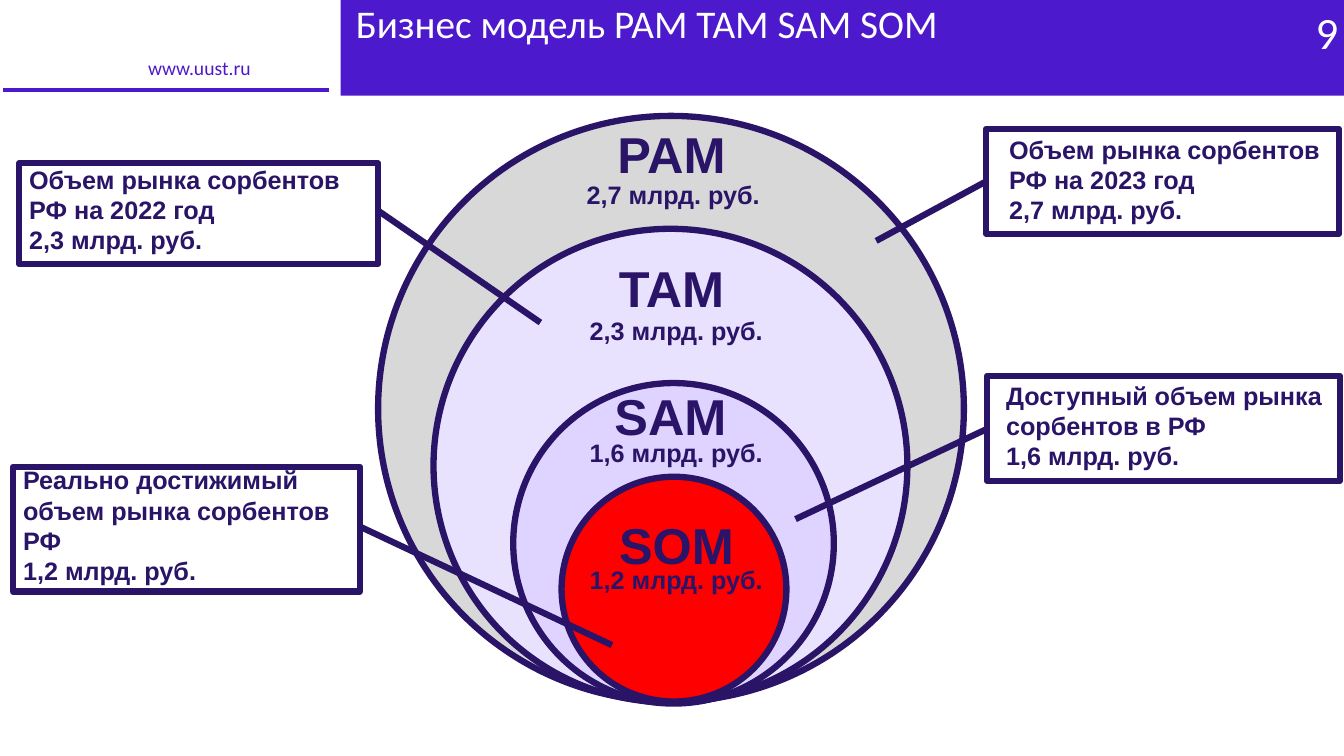
from pptx import Presentation
from pptx.dml.color import RGBColor
from pptx.enum.shapes import MSO_CONNECTOR as Line, MSO_SHAPE as Form
from pptx.enum.text import MSO_ANCHOR as Anchor, MSO_AUTO_SIZE as Fit, PP_ALIGN as Align
from pptx.oxml.ns import qn
from pptx.util import Inches, Pt
from lxml import etree

VIOLET = RGBColor(0x4D, 0x19, 0xCC)
DARK = RGBColor(0x2A, 0x14, 0x68)
WHITE = RGBColor(0xFF, 0xFF, 0xFF)
GREY = RGBColor(0xD8, 0xD8, 0xD8)
PALE = RGBColor(0xE9, 0xE2, 0xFF)
LILAC = RGBColor(0xDF, 0xD3, 0xFF)
RED = RGBColor(0xFF, 0x00, 0x00)


def add_form(kind, place, fill, edge):
    form = slide.shapes.add_shape(kind, *map(Inches, place))
    form.shadow.inherit = False
    if fill is None:
        form.fill.background()
    else:
        form.fill.solid()
        form.fill.fore_color.rgb = fill
    if edge is None:
        form.line.fill.background()
    else:
        form.line.color.rgb = edge
        form.line.width = Pt(4.5)


def add_text(box, lines, size, color=DARK, font="Arial", bold=True, align=Align.LEFT):
    frame = box.text_frame
    frame.word_wrap = True
    frame.auto_size = Fit.NONE
    frame.vertical_anchor = Anchor.TOP
    for index, line in enumerate(lines):
        para = frame.add_paragraph() if index else frame.paragraphs[0]
        para.alignment = align
        run = para.add_run()
        run.text = line
        run.font.name = font
        run.font.size = Pt(size)
        run.font.bold = bold
        run.font.color.rgb = color
    return frame


deck = Presentation()
deck.slide_width, deck.slide_height = Inches(13.33), Inches(7.5)
slide = deck.slides.add_slide(deck.slide_layouts[5])
shapes = slide.shapes

add_form(Form.RECTANGLE, (3.38, 0, 9.96, 0.95), VIOLET, None)
add_form(Form.RECTANGLE, (0, 0.84, 3.3, 0.1), VIOLET, WHITE)

title = shapes.title
title.left, title.top, title.width, title.height = map(Inches, (3.43, 0, 9.91, 0.46))
shapes._spTree.append(title._element)
head = add_text(title, ["Бизнес модель PAM TAM SAM SOM"], 28, WHITE, "Calibri", False)
head.paragraphs[0].line_spacing = 0.9

site = shapes.add_textbox(*map(Inches, (1.37, 0.53, 1.56, 0.27)))
link = add_text(site, ["www.uust.ru"], 14, VIOLET, "Calibri", False)
link.paragraphs[0].line_spacing = 0.9

page = shapes.add_textbox(*map(Inches, (12.95, 0, 0.38, 0.64)))
add_text(page, ["9"], 32, WHITE, "Calibri", False, Align.RIGHT)

markets = [
    ("PAM", "2,7 млрд. руб.", (3.75, 1.15, 5.81), GREY, (5.92, 1.17), (5.72, 1.73)),
    ("TAM", "2,3 млрд. руб.", (4.3, 2.27, 4.7), PALE, (5.92, 2.5), (5.75, 3.08)),
    ("SAM", "1,6 млрд. руб.", (5.09, 3.8, 3.18), LILAC, (5.91, 3.77), (5.75, 4.29)),
    ("SOM", "1,2 млрд. руб.", (5.57, 4.73, 2.23), RED, (5.97, 5.05), (5.75, 5.55)),
]
for name, value, (left, top, size), fill, spot, below in markets:
    add_form(Form.OVAL, (left, top, size, size), fill, DARK)
for name, value, ring, fill, spot, below in markets:
    label = shapes.add_textbox(*map(Inches, (*spot, 1.48, 0.71)))
    add_text(label, [name], 36, align=Align.CENTER)
    amount = shapes.add_textbox(*map(Inches, (*below, 1.93, 0.4)))
    add_text(amount, [value], 18)

notes = [
    ("Объем рынка сорбентов РФ на 2023 год", "2,7 млрд. руб.",
     (9.78, 1.28, 3.5, 1.04), (9.91, 1.28, 3.36, 1.01), (9.78, 1.8, 8.69, 2.39)),
    ("Объем рынка сорбентов РФ на 2022 год", "2,3 млрд. руб.",
     (0.19, 1.62, 3.56, 1), (0.19, 1.58, 3.5, 1.01), (3.75, 2.09, 5.36, 3.2)),
    ("Доступный объем рынка сорбентов в РФ", "1,6 млрд. руб.",
     (9.79, 3.73, 3.5, 1.04), (9.88, 3.72, 3.45, 1.01), (9.8, 4.25, 7.89, 5.15)),
    ("Реально достижимый объем рынка сорбентов РФ", "1,2 млрд. руб.",
     (0.13, 4.63, 3.44, 1.24), (0.13, 4.56, 3.25, 1.31), (3.56, 5.22, 6.07, 6.4)),
]
for about, value, border, place, ends in notes:
    add_form(Form.RECTANGLE, border, None, DARK)
    add_text(shapes.add_textbox(*map(Inches, place)), [about, value], 18)
    lead = shapes.add_connector(Line.STRAIGHT, *map(Inches, ends))
    lead.line.color.rgb = DARK
    lead.line.width = Pt(4.5)
    etree.SubElement(lead._element.spPr, qn("a:effectLst"))

deck.save("out.pptx")
